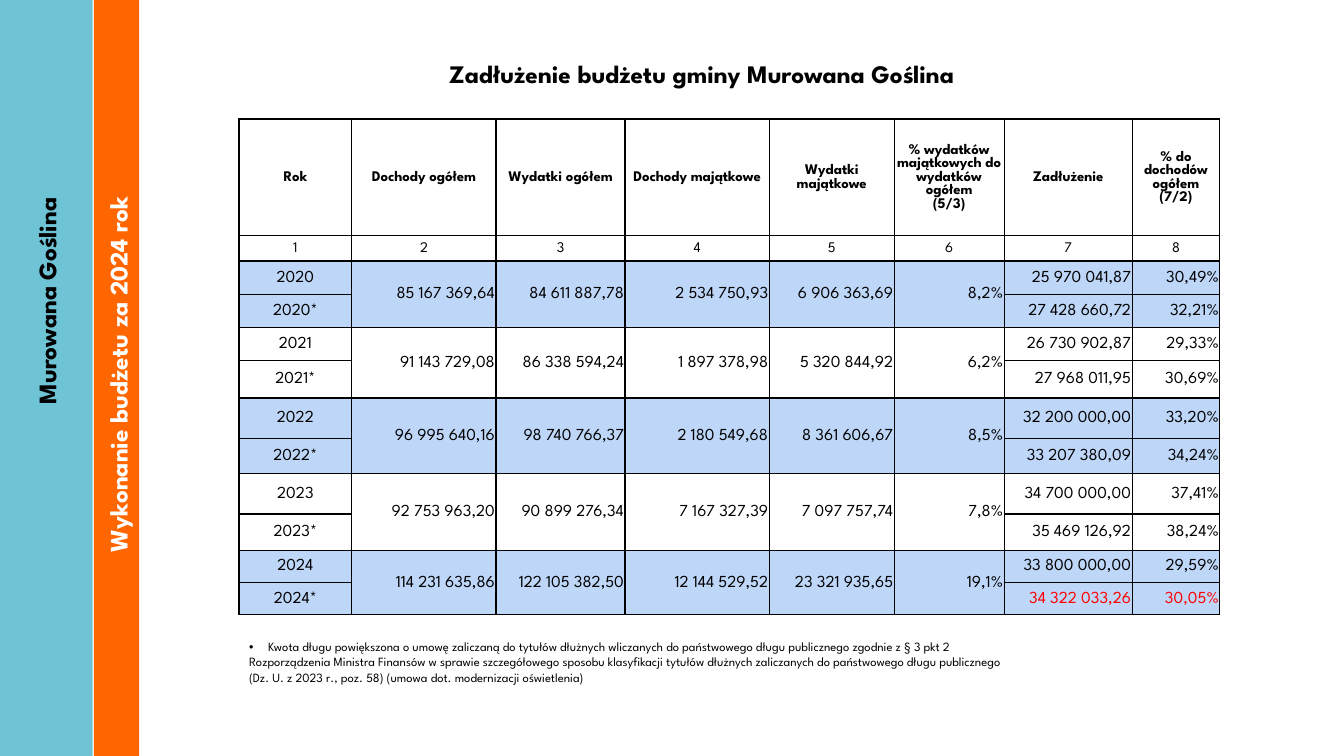
"""Build the slide on the debt of the Murowana Goślina municipality."""
from lxml.etree import SubElement
from pptx import Presentation
from pptx.dml.color import RGBColor
from pptx.enum.shapes import MSO_SHAPE
from pptx.enum.text import MSO_ANCHOR, MSO_AUTO_SIZE, PP_ALIGN
from pptx.oxml.ns import qn
from pptx.util import Inches, Pt

COLORS = {
    "black": "000000", "white": "FFFFFF", "teal": "6EC4D5",
    "orange": "FF6600", "band": "BED6F8", "red": "FF0000",
}
HEADERS = [
    "Rok", "Dochody ogółem", "Wydatki ogółem", "Dochody majątkowe", "Wydatki majątkowe",
    "% wydatków majątkowych do wydatków ogółem\n(5/3)", "Zadłużenie", "% do dochodów ogółem\n(7/2)",
]
YEARS = [
    ("2020", ["85 167 369,64", "84 611 887,78", "2 534 750,93", "6 906 363,69", "8,2%"],
     ["25 970 041,87", "30,49%"], ["27 428 660,72", "32,21%"]),
    ("2021", ["91 143 729,08", "86 338 594,24", "1 897 378,98", "5 320 844,92", "6,2%"],
     ["26 730 902,87", "29,33%"], ["27 968 011,95", "30,69%"]),
    ("2022", ["96 995 640,16", "98 740 766,37", "2 180 549,68", "8 361 606,67", "8,5%"],
     ["32 200 000,00", "33,20%"], ["33 207 380,09", "34,24%"]),
    ("2023", ["92 753 963,20", "90 899 276,34", "7 167 327,39", "7 097 757,74", "7,8%"],
     ["34 700 000,00", "37,41%"], ["35 469 126,92", "38,24%"]),
    ("2024", ["114 231 635,86", "122 105 382,50", "12 144 529,52", "23 321 935,65", "19,1%"],
     ["33 800 000,00", "29,59%"], ["34 322 033,26", "30,05%"]),
]
COLUMN_WIDTHS = [1.12, 1.43, 1.28, 1.43, 1.24, 1.09, 1.27, 0.87]
ROW_HEIGHTS = [1.16, 0.25, 0.33, 0.33, 0.33, 0.37, 0.4, 0.35, 0.4, 0.36, 0.32, 0.32]


def write_text(paragraph, text, size, color="black", bold=False, align=PP_ALIGN.LEFT):
    paragraph.alignment = align
    for index, line in enumerate(text.split("\n")):
        if index:
            paragraph.add_line_break()
        run = paragraph.add_run()
        run.text = line
        run.font.name = "League Spartan"
        run.font.size = Pt(size)
        run.font.bold = bold
        run.font.color.rgb = RGBColor.from_string(COLORS[color])


def format_cell(cell, fill):
    cell.vertical_anchor = MSO_ANCHOR.MIDDLE
    cell.margin_left = cell.margin_right = cell.margin_top = Inches(0.01)
    cell.margin_bottom = 0
    properties = cell._tc.get_or_add_tcPr()
    for side in ("a:lnL", "a:lnR", "a:lnT", "a:lnB"):
        line = SubElement(properties, qn(side), w=str(Pt(1)))
        solid = SubElement(line, qn("a:solidFill"))
        SubElement(solid, qn("a:srgbClr"), val=COLORS["black"])
    cell.fill.solid()
    cell.fill.fore_color.rgb = RGBColor.from_string(COLORS[fill])


presentation = Presentation()
presentation.slide_width = Inches(13.33)
presentation.slide_height = Inches(7.5)
slide = presentation.slides.add_slide(presentation.slide_layouts[1])

for left, width, color in [(0, 0.92, "teal"), (0.93, 0.45, "orange")]:
    stripe = slide.shapes.add_shape(MSO_SHAPE.RECTANGLE, Inches(left), 0, Inches(width), Inches(7.5))
    stripe.shadow.inherit = False
    stripe.fill.solid()
    stripe.fill.fore_color.rgb = RGBColor.from_string(COLORS[color])
    stripe.line.fill.background()

for text, left, top, width, color in [
    ("Murowana Goślina", -0.8, 2.65, 2.52, "black"),
    ("Wykonanie budżetu za 2024 rok", -1.54, 2.67, 5.41, "white"),
]:
    label = slide.shapes.add_textbox(Inches(left), Inches(top), Inches(width), Inches(0.4))
    label.rotation = 270
    label.text_frame.word_wrap = True
    label.text_frame.vertical_anchor = MSO_ANCHOR.MIDDLE
    write_text(label.text_frame.paragraphs[0], text, 18, color, True)

title = slide.shapes.title
title.left, title.top, title.width, title.height = Inches(2.53), Inches(0.53), Inches(8.86), Inches(0.4)
title.text_frame.auto_size = MSO_AUTO_SIZE.NONE
title.text_frame.vertical_anchor = MSO_ANCHOR.TOP
write_text(title.text_frame.paragraphs[0], "Zadłużenie budżetu gminy Murowana Goślina",
           18, bold=True, align=PP_ALIGN.CENTER)

rows = [HEADERS, [str(number) for number in range(1, 9)]]
for year, totals, debt, increased_debt in YEARS:
    rows.append([year, *totals, *debt])
    rows.append([year + "*", *[""] * len(totals), *increased_debt])

table = slide.shapes.add_table(len(rows), len(HEADERS), Inches(2.37), Inches(1.18),
                               Inches(9.74), Inches(4.91)).table
table.first_row = table.horz_banding = False
for column, width in zip(table.columns, COLUMN_WIDTHS):
    column.width = Inches(width)
for row, height in zip(table.rows, ROW_HEIGHTS):
    row.height = Inches(height)

for row_index, values in enumerate(rows):
    fill = "band" if row_index >= 2 and row_index % 4 in (2, 3) else "white"
    for column_index, value in enumerate(values):
        cell = table.cell(row_index, column_index)
        format_cell(cell, fill)
        if value:
            is_figure = row_index >= 2 and column_index > 0
            is_latest_debt = row_index == len(rows) - 1 and column_index > 0
            write_text(cell.text_frame.paragraphs[0], value,
                       12 if row_index >= 2 else 10.5,
                       "red" if is_latest_debt else "black",
                       row_index == 0,
                       PP_ALIGN.RIGHT if is_figure else PP_ALIGN.CENTER)

for first_row in range(2, len(rows), 2):
    for column_index in range(1, 6):
        table.cell(first_row, column_index).merge(table.cell(first_row + 1, column_index))

note = slide.placeholders[1]
note.left, note.top, note.width, note.height = Inches(2.37), Inches(6.29), Inches(9.74), Inches(0.56)
note.text_frame.auto_size = MSO_AUTO_SIZE.NONE
bullet_paragraph = note.text_frame.paragraphs[0]
plain_paragraph = note.text_frame.add_paragraph()
for paragraph, indent, bullet, text in [
    (bullet_paragraph, 0.19, "•",
     "Kwota długu powiększona o umowę zaliczaną do tytułów dłużnych wliczanych do "
     "państwowego długu publicznego zgodnie z § 3 pkt 2"),
    (plain_paragraph, 0, None,
     "Rozporządzenia Ministra Finansów w sprawie szczegółowego sposobu klasyfikacji tytułów "
     "dłużnych zaliczanych do państwowego długu publicznego\n"
     "(Dz. U. z 2023 r., poz. 58) (umowa dot. modernizacji oświetlenia)"),
]:
    properties = paragraph._p.get_or_add_pPr()
    properties.set("marL", str(Inches(indent)))
    properties.set("indent", str(-Inches(indent)))
    if bullet:
        SubElement(properties, qn("a:buChar"), char=bullet)
    else:
        SubElement(properties, qn("a:buNone"))
    paragraph.space_before = Pt(0)
    write_text(paragraph, text, 9)

presentation.save("out.pptx")
